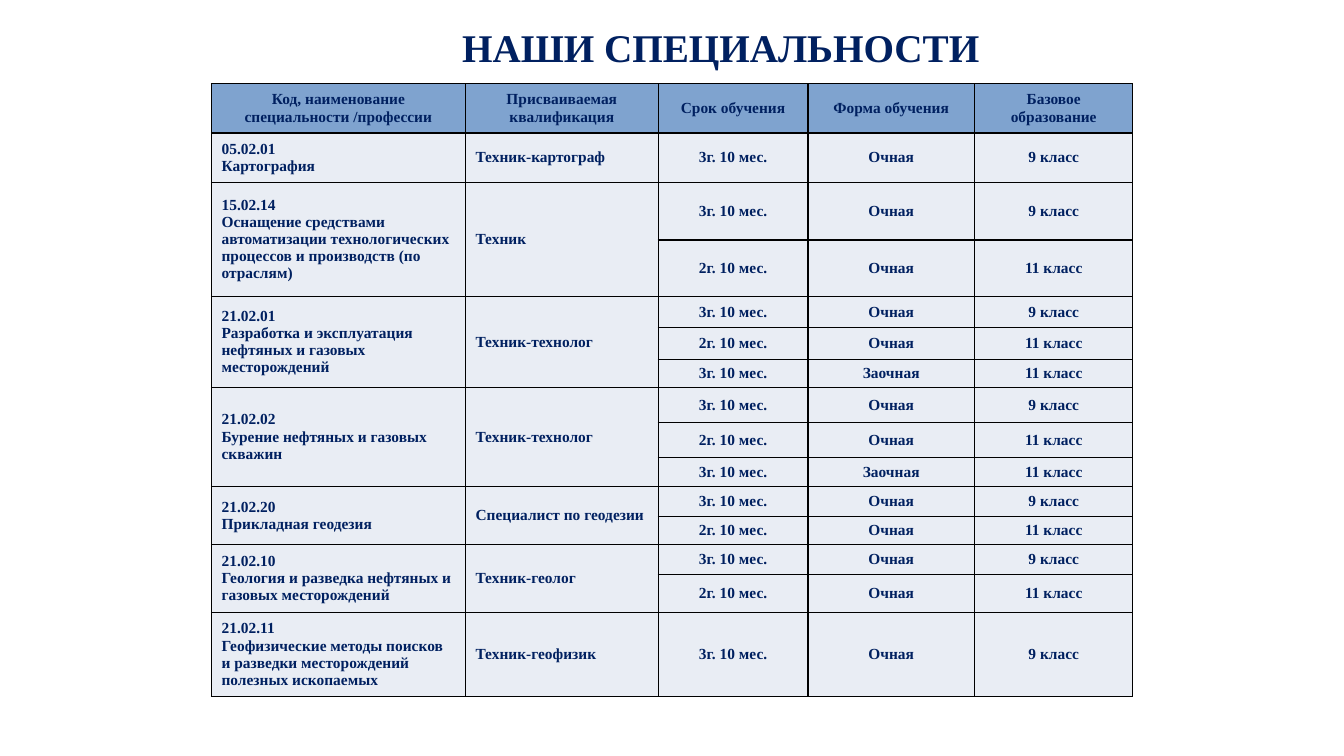
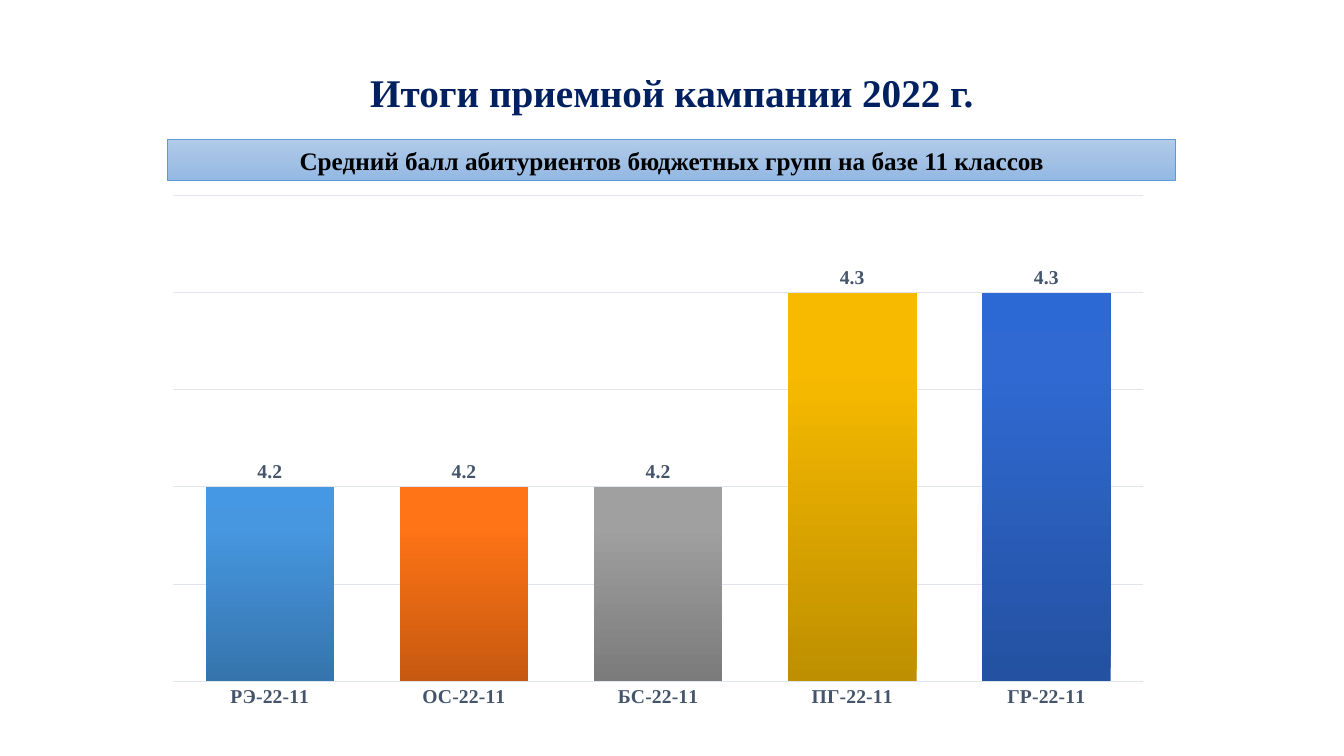
from lxml.etree import SubElement
from pptx import Presentation
from pptx.chart.data import CategoryChartData
from pptx.dml.color import RGBColor
from pptx.enum.chart import XL_CHART_TYPE, XL_LABEL_POSITION, XL_TICK_LABEL_POSITION, XL_TICK_MARK
from pptx.enum.shapes import MSO_SHAPE
from pptx.enum.text import MSO_ANCHOR, PP_ALIGN
from pptx.oxml import parse_xml
from pptx.oxml.ns import nsdecls, qn
from pptx.util import Cm, Pt

# Shared style
FONT = "Times New Roman"
NAVY = RGBColor(0x00, 0x20, 0x60)
BLACK = RGBColor(0x00, 0x00, 0x00)
HEADER_BLUE = RGBColor(0x7F, 0xA3, 0xCF)
CELL_BLUE = RGBColor(0xE9, 0xED, 0xF4)
SLATE = RGBColor(0x44, 0x54, 0x6A)
GRID_GREY = RGBColor(0xE0, 0xE5, 0xEB)
BAND_LINE = RGBColor(0x5B, 0x9B, 0xD5)

# Specialities: code, name, qualification, study options, row heights in cm
HEADERS = ["Код, наименование специальности /профессии", "Присваиваемая квалификация",
           "Срок обучения", "Форма обучения", "Базовое образование"]
AFTER_9 = ("3г. 10 мес.", "Очная", "9 класс")
AFTER_11 = ("2г. 10 мес.", "Очная", "11 класс")
BY_MAIL = ("3г. 10 мес.", "Заочная", "11 класс")
SPECIALITIES = [
    ("05.02.01", "Картография", "Техник-картограф", [AFTER_9], [1.24]),
    ("15.02.14", "Оснащение средствами автоматизации технологических процессов "
     "и производств (по отраслям)", "Техник", [AFTER_9, AFTER_11], [1.46, 1.42]),
    ("21.02.01", "Разработка и эксплуатация нефтяных и газовых месторождений",
     "Техник-технолог", [AFTER_9, AFTER_11, BY_MAIL], [0.79, 0.79, 0.72]),
    ("21.02.02", "Бурение нефтяных и газовых скважин",
     "Техник-технолог", [AFTER_9, AFTER_11, BY_MAIL], [0.88, 0.88, 0.72]),
    ("21.02.20", "Прикладная геодезия", "Специалист по геодезии",
     [AFTER_9, AFTER_11], [0.76, 0.72]),
    ("21.02.10", "Геология и разведка нефтяных и газовых месторождений",
     "Техник-геолог", [AFTER_9, AFTER_11], [0.75, 0.95]),
    ("21.02.11", "Геофизические методы поисков и разведки месторождений полезных ископаемых",
     "Техник-геофизик", [AFTER_9], [2.12]),
]
HEADER_HEIGHT = 1.24
COLUMN_WIDTHS = [6.4, 4.86, 3.77, 4.2, 3.99]

# Average scores: group, score, gradient from the foot of the bar to its top
SCORES = [
    ("РЭ-22-11", 4.2, [(0, "3674AD"), (80, "4697E0"), (100, "4498E4")]),
    ("ОС-22-11", 4.2, [(0, "C65910"), (80, "FF7416"), (100, "FF7517")]),
    ("БС-22-11", 4.2, [(0, "7B7B7B"), (80, "A0A0A0"), (100, "A1A1A1")]),
    ("ПГ-22-11", 4.3, [(0, "BE8F00"), (80, "F7BA00"), (100, "F8BB00")]),
    ("ГР-22-11", 4.3, [(0, "2451A1"), (80, "2F69D1"), (100, "2C69D5")]),
]
BAND_GRADIENT = [(0, "B1CBE9"), (50, "A3C1E5"), (100, "93B9E4")]
PLOT_AREA = {"x": 0.005, "y": 0.118, "w": 0.963, "h": 0.83}


def style_font(font, size, color):
    font.name, font.size, font.bold = FONT, Pt(size), True
    font.color.rgb = color


def write(frame, lines, size, color, align=PP_ALIGN.CENTER):
    frame.word_wrap = True
    for index, line in enumerate(lines):
        para = frame.add_paragraph() if index else frame.paragraphs[0]
        para.alignment = align
        span = para.add_run()
        span.text = line
        style_font(span.font, size, color)


def add_title(page, text, left, top, width, height, indent=0.25):
    box = page.shapes.add_textbox(Cm(left), Cm(top), Cm(width), Cm(height))
    frame = box.text_frame
    frame.margin_left = Cm(indent)
    frame.vertical_anchor = MSO_ANCHOR.MIDDLE
    write(frame, [text], 28, NAVY)


def set_gradient(fill, owner, stops, angle):
    """Fill with any number of stops; owner is the element that holds the fill."""
    fill.gradient()
    fill.gradient_angle = angle
    stop_list = next(owner.iter(qn("a:gsLst")))
    for stop in list(stop_list):
        stop_list.remove(stop)
    for position, color in stops:
        stop = SubElement(stop_list, qn("a:gs"), pos=str(position * 1000))
        SubElement(stop, qn("a:srgbClr"), val=color)


def fill_cell(cell, lines, color, align=PP_ALIGN.CENTER):
    cell.vertical_anchor = MSO_ANCHOR.MIDDLE
    write(cell.text_frame, lines, 11, NAVY, align)


def frame_cell(cell, color):
    cell.fill.solid()
    cell.fill.fore_color.rgb = color
    properties = cell._tc.get_or_add_tcPr()
    for index, side in enumerate("LRTB"):
        properties.insert(index, parse_xml(
            f'<a:ln{side} {nsdecls("a")} w="12700"><a:solidFill>'
            f'<a:srgbClr val="{BLACK}"/></a:solidFill></a:ln{side}>'))


def add_specialities(page):
    heights = [HEADER_HEIGHT] + [height for item in SPECIALITIES for height in item[4]]
    table = page.shapes.add_table(
        len(heights), len(HEADERS), Cm(5.33), Cm(2.11),
        Cm(sum(COLUMN_WIDTHS)), Cm(sum(heights))).table
    table.horz_banding = False
    for column, width in zip(table.columns, COLUMN_WIDTHS):
        column.width = Cm(width)
    for row_index, (row, height) in enumerate(zip(table.rows, heights)):
        row.height = Cm(height)
        for cell in row.cells:
            frame_cell(cell, CELL_BLUE if row_index else HEADER_BLUE)

    for column, header in enumerate(HEADERS):
        fill_cell(table.cell(0, column), [header], HEADER_BLUE)
    first = 1
    for code, name, qualification, options, _ in SPECIALITIES:
        last = first + len(options) - 1
        for column, lines in enumerate([[code, name], [qualification]]):
            cell = table.cell(first, column)
            if last > first:
                cell.merge(table.cell(last, column))
            fill_cell(cell, lines, CELL_BLUE, PP_ALIGN.LEFT)
        for row, option in enumerate(options, first):
            for column, text in enumerate(option, 2):
                fill_cell(table.cell(row, column), [text], CELL_BLUE)
        first = last + 1


def add_score_chart(page):
    data = CategoryChartData(number_format="0.0")
    data.categories = [group for group, _, _ in SCORES]
    data.add_series("Средний балл", [score for _, score, _ in SCORES])
    chart = page.shapes.add_chart(XL_CHART_TYPE.COLUMN_CLUSTERED, Cm(4.23), Cm(3.18),
                                  Cm(25.4), Cm(14.76), data).chart
    chart.has_title = chart.has_legend = False
    style_font(chart.font, 14, SLATE)

    # Axes
    groups, values = chart.category_axis, chart.value_axis
    for axis in (groups, values):
        axis.major_tick_mark = axis.minor_tick_mark = XL_TICK_MARK.NONE
    values.minimum_scale, values.maximum_scale, values.major_unit = 4.1, 4.35, 0.05
    values.tick_label_position = XL_TICK_LABEL_POSITION.NONE
    values.format.line.fill.background()
    for line in (groups.format.line, values.major_gridlines.format.line):
        line.color.rgb = GRID_GREY
        line.width = Pt(0.75)

    # Bars and their labels
    plot = chart.plots[0]
    plot.gap_width, plot.overlap, plot.vary_by_categories = 51, -24, False
    series = plot.series[0]
    for index, (_, _, stops) in enumerate(SCORES):
        fill = series.points[index].format.fill
        owner = series._element.findall(qn("c:dPt"))[index]
        set_gradient(fill, owner, stops, 90)
    plot.has_data_labels = True
    labels = plot.data_labels
    labels.show_value = True
    labels.position = XL_LABEL_POSITION.OUTSIDE_END
    labels.number_format, labels.number_format_is_linked = "0.0", False
    style_font(labels.font, 14, SLATE)

    # Inner plot area as shares of the chart
    area = next(chart._chartSpace.iter(qn("c:plotArea")))
    for layout in area.findall(qn("c:layout")):
        area.remove(layout)
    modes = '<c:layoutTarget val="inner"/><c:xMode val="edge"/><c:yMode val="edge"/>'
    sizes = "".join(f'<c:{key} val="{share}"/>' for key, share in PLOT_AREA.items())
    area.insert(0, parse_xml(f'<c:layout {nsdecls("c")}><c:manualLayout>{modes}{sizes}'
                             '</c:manualLayout></c:layout>'))


def add_band(page, text):
    band = page.shapes.add_shape(MSO_SHAPE.RECTANGLE, Cm(4.23), Cm(3.52), Cm(25.4), Cm(1.03))
    band.shadow.inherit = False
    set_gradient(band.fill, band._element, BAND_GRADIENT, 270)
    band.line.color.rgb = BAND_LINE
    band.line.width = Pt(0.5)
    write(band.text_frame, [text], 18, BLACK)


def main():
    deck = Presentation()
    deck.slide_width, deck.slide_height = Cm(33.87), Cm(19.05)
    blank = deck.slide_layouts[6]

    # Specialities
    page = deck.slides.add_slide(blank)
    add_specialities(page)
    add_title(page, "НАШИ СПЕЦИАЛЬНОСТИ", 7.14, 0.46, 19.6, 1.45, indent=2.7)

    # Admission results
    page = deck.slides.add_slide(blank)
    add_title(page, "Итоги приемной кампании 2022 г.", 4.23, 1.09, 25.4, 2.44)
    add_score_chart(page)
    add_band(page, "Средний балл абитуриентов бюджетных групп на базе 11 классов")

    deck.save("out.pptx")


if __name__ == "__main__":
    main()
